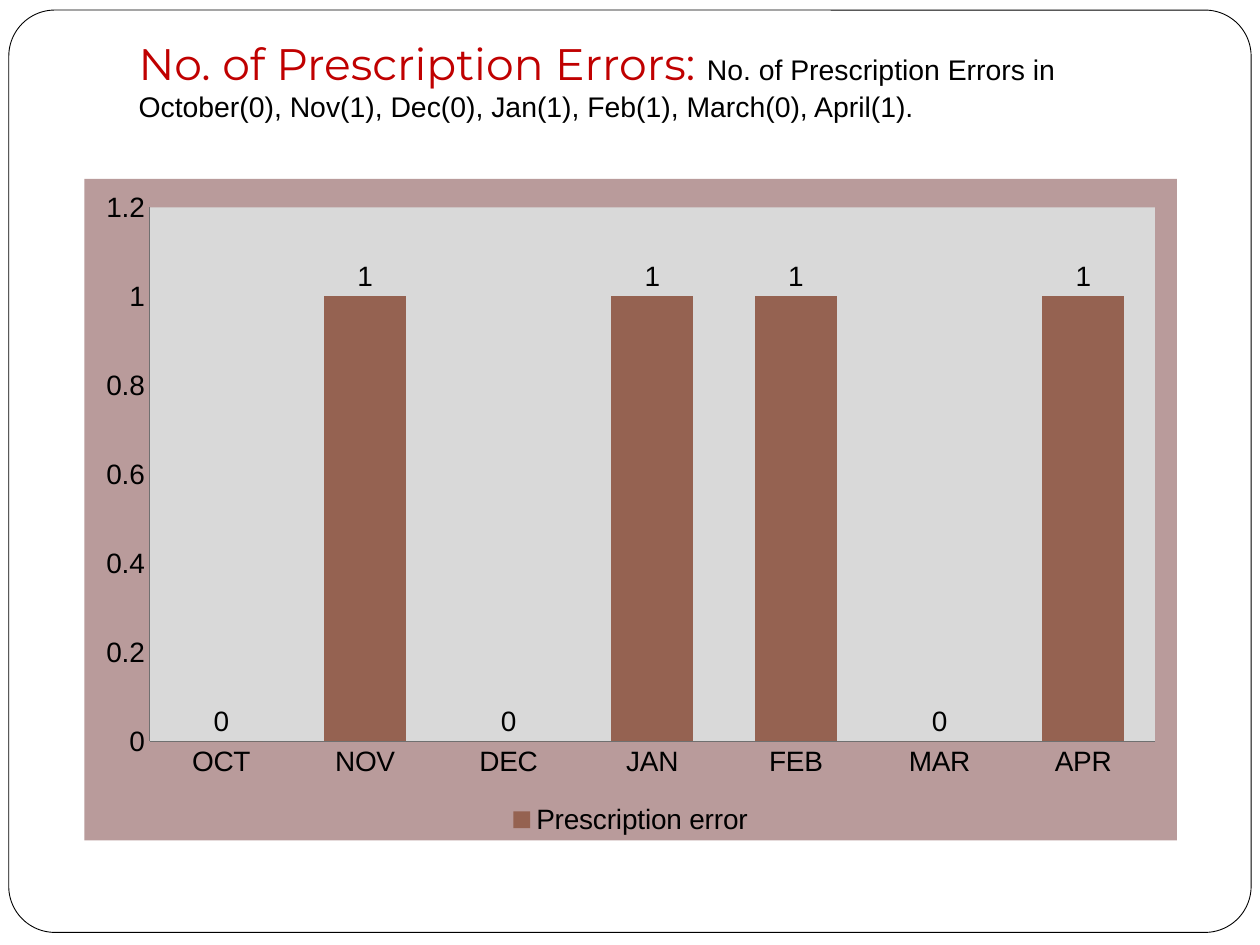
from lxml import etree
from pptx import Presentation
from pptx.chart.data import CategoryChartData
from pptx.dml.color import RGBColor
from pptx.enum.chart import XL_CHART_TYPE, XL_LABEL_POSITION, XL_LEGEND_POSITION, XL_TICK_MARK
from pptx.enum.shapes import MSO_SHAPE
from pptx.enum.text import MSO_ANCHOR, MSO_AUTO_SIZE, PP_ALIGN
from pptx.oxml import parse_xml
from pptx.oxml.ns import nsdecls
from pptx.util import Inches, Pt

COLUMNS = XL_CHART_TYPE.COLUMN_CLUSTERED
OUTSIDE_END = XL_LABEL_POSITION.OUTSIDE_END
BOTTOM_LEGEND = XL_LEGEND_POSITION.BOTTOM
NO_TICK = XL_TICK_MARK.NONE
ROUNDED = MSO_SHAPE.ROUNDED_RECTANGLE
ANCHOR_BOTTOM = MSO_ANCHOR.BOTTOM
NO_AUTOFIT = MSO_AUTO_SIZE.NONE
LEFT = PP_ALIGN.LEFT

WHITE = RGBColor(0xFF, 0xFF, 0xFF)
BLACK = RGBColor(0, 0, 0)
RED = RGBColor(0xC0, 0, 0)
BROWN = RGBColor(0x95, 0x62, 0x51)
ROSE = RGBColor(0xB9, 0x9B, 0x9B)
LIGHT_GREY = RGBColor(0xD9, 0xD9, 0xD9)
AXIS_GREY = RGBColor(0x70, 0x70, 0x70)

ERRORS = {"OCT": 0, "NOV": 1, "DEC": 0, "JAN": 1, "FEB": 1, "MAR": 0, "APR": 1}
HEADING = [
    ("No. of Prescription Errors: ", "Montserrat", 25.2, RED),
    ("No. of Prescription Errors in October(0), Nov(1), Dec(0), Jan(1), "
     "Feb(1), March(0), April(1).", "Arial", 16.2, BLACK),
]


def style_font(font, name, size, color):
    font.name = name
    font.size = Pt(size)
    font.color.rgb = color


def add_frame(slide):
    frame = slide.shapes.add_shape(
        ROUNDED, Inches(0.07), Inches(0.08), Inches(9.86), Inches(7.32))
    frame.adjustments[0] = 0.05
    frame.shadow.inherit = False
    frame.fill.solid()
    frame.fill.fore_color.rgb = WHITE
    frame.line.color.rgb = BLACK
    frame.line.width = Pt(0.5)
    slide.shapes.title.element.addprevious(frame.element)


def write_heading(slide):
    heading = slide.shapes.title
    heading.left, heading.top = Inches(1), Inches(0.3)
    heading.width, heading.height = Inches(8.5), Inches(0.78)
    text = heading.text_frame
    text.auto_size = NO_AUTOFIT
    text.vertical_anchor = ANCHOR_BOTTOM
    text.margin_bottom = Inches(0.1)
    paragraph = text.paragraphs[0]
    paragraph.alignment = LEFT
    for words, name, size, color in HEADING:
        run = paragraph.add_run()
        run.text = words
        style_font(run.font, name, size, color)


def area_fill(color):
    return parse_xml(
        f'<c:spPr {nsdecls("c", "a")}><a:solidFill><a:srgbClr val="{color}"/>'
        '</a:solidFill><a:ln><a:noFill/></a:ln></c:spPr>')


def style_axis(axis):
    axis.has_major_gridlines = False
    axis.major_tick_mark = NO_TICK
    axis.minor_tick_mark = NO_TICK
    axis.format.line.color.rgb = AXIS_GREY


def add_error_chart(slide):
    errors = CategoryChartData()
    errors.categories = list(ERRORS)
    errors.add_series("Prescription error", list(ERRORS.values()))
    chart = slide.shapes.add_chart(
        COLUMNS, Inches(0.67), Inches(1.42), Inches(8.67), Inches(5.25), errors).chart
    style_font(chart.font, "Arial", 16, BLACK)
    chart.has_title = False
    chart.has_legend = True
    chart.legend.position = BOTTOM_LEGEND
    chart.legend.include_in_layout = False

    style_axis(chart.category_axis)
    style_axis(chart.value_axis)
    chart.value_axis.minimum_scale = 0
    chart.value_axis.maximum_scale = 1.2
    chart.value_axis.major_unit = 0.2

    plot = chart.plots[0]
    plot.gap_width = 75
    plot.vary_by_categories = False
    plot.has_data_labels = True
    plot.data_labels.show_value = True
    plot.data_labels.position = OUTSIDE_END
    columns = plot.series[0].format.fill
    columns.solid()
    columns.fore_color.rgb = BROWN

    chart_part = chart.element.chart
    chart_part.addnext(area_fill(ROSE))
    etree.ElementBase.append(chart_part.plotArea, area_fill(LIGHT_GREY))


def main():
    deck = Presentation()
    deck.slide_width, deck.slide_height = Inches(10), Inches(7.5)
    slide = deck.slides.add_slide(deck.slide_layouts[5])
    add_frame(slide)
    write_heading(slide)
    add_error_chart(slide)
    deck.save("out.pptx")


if __name__ == "__main__":
    main()
